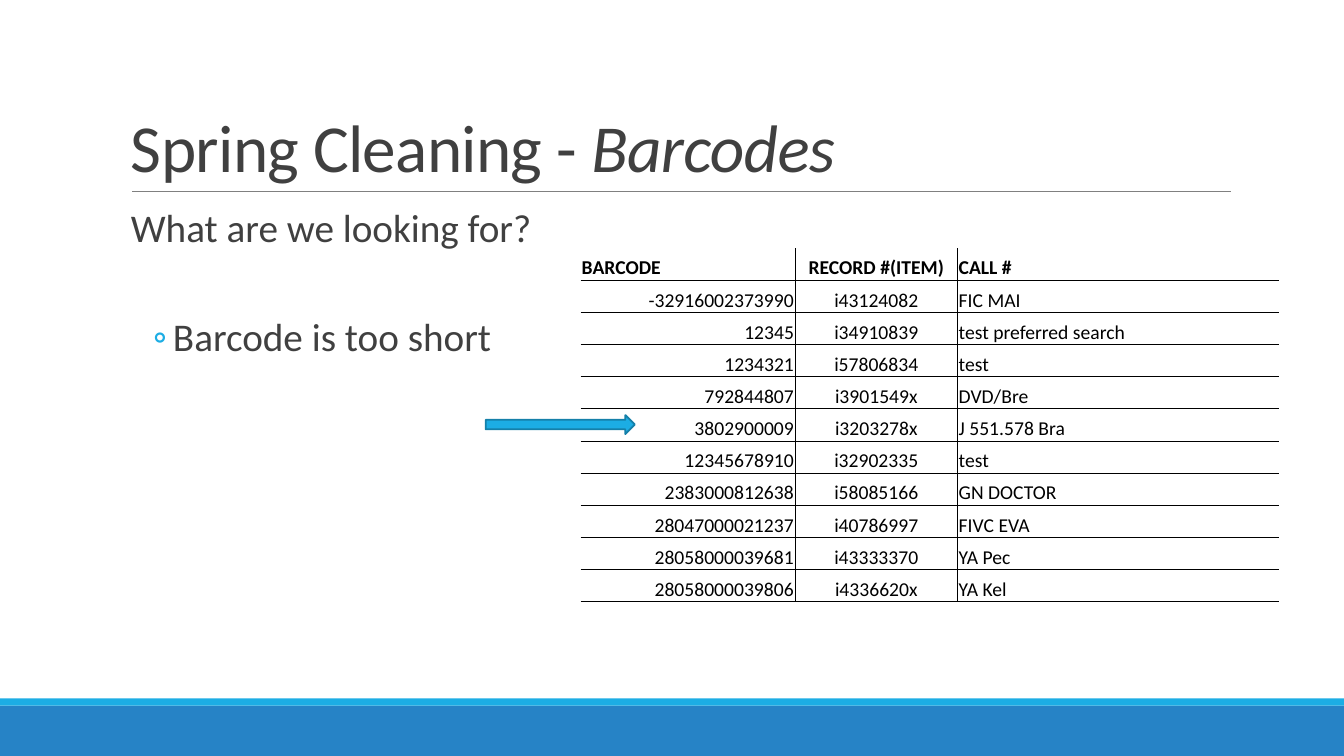
from lxml.etree import SubElement
from pptx import Presentation
from pptx.dml.color import RGBColor
from pptx.enum.shapes import MSO_CONNECTOR, MSO_SHAPE
from pptx.enum.text import MSO_ANCHOR, PP_ALIGN
from pptx.oxml.ns import qn
from pptx.util import Cm, Pt

WHITE = RGBColor(0xFF, 0xFF, 0xFF)
BLACK = RGBColor(0x00, 0x00, 0x00)
CHARCOAL = RGBColor(0x40, 0x40, 0x40)
GREY = RGBColor(0x80, 0x80, 0x80)
BLUE = RGBColor(0x26, 0x83, 0xC6)
SKY = RGBColor(0x1C, 0xAD, 0xE4)
TEAL = RGBColor(0x15, 0x80, 0xA9)

RECORDS = [
    ("BARCODE", "RECORD #(ITEM)", "CALL #"),
    ("-32916002373990", "i43124082", "FIC MAI"),
    ("12345", "i34910839", "test preferred search"),
    ("1234321", "i57806834", "test"),
    ("792844807", "i3901549x", "DVD/Bre"),
    ("3802900009", "i3203278x", "J 551.578 Bra"),
    ("12345678910", "i32902335", "test"),
    ("2383000812638", "i58085166", "GN DOCTOR"),
    ("28047000021237", "i40786997", "FIVC EVA"),
    ("28058000039681", "i43333370", "YA Pec"),
    ("28058000039806", "i4336620x", "YA Kel"),
]
COLUMN_WIDTHS = (5.41, 4.09, 8.1)
COLUMN_ALIGNMENTS = (PP_ALIGN.RIGHT, PP_ALIGN.CENTER, PP_ALIGN.LEFT)
ROW_HEIGHT = 0.81


def write(paragraph, text, size=28, color=CHARCOAL, bold=False, italic=False, tracking=0):
    run = paragraph.add_run()
    run.text = text
    font = run.font
    font.name, font.size, font.bold, font.italic = "Calibri", Pt(size), bold, italic
    font.color.rgb = color
    if tracking:
        run._r.get_or_add_rPr().set("spc", str(int(tracking * 100)))


class BarcodeSlide:
    """Draws the elements of the slide in one shared style."""

    def __init__(self, presentation):
        self.slide = presentation.slides.add_slide(presentation.slide_layouts[6])
        self.shapes = self.slide.shapes
        self.slide.background.fill.solid()
        self.slide.background.fill.fore_color.rgb = WHITE

    def block(self, kind, left, top, width, height, fill, outline=None):
        block = self.shapes.add_shape(kind, Cm(left), Cm(top), Cm(width), Cm(height))
        block.shadow.inherit = False
        block.fill.solid()
        block.fill.fore_color.rgb = fill
        if outline is None:
            block.line.fill.background()
        else:
            block.line.color.rgb = outline
            block.line.width = Pt(1.25)

    def rule(self, left, right, y):
        rule = self.shapes.add_connector(
            MSO_CONNECTOR.STRAIGHT, Cm(left), Cm(y), Cm(right), Cm(y))
        rule.line.color.rgb = GREY
        rule.line.width = Pt(0.5)
        SubElement(rule._element.spPr, qn("a:effectLst"))

    def text_area(self, left, top, width, height, anchor, side_inset):
        area = self.shapes.add_textbox(Cm(left), Cm(top), Cm(width), Cm(height))
        frame = area.text_frame
        frame.word_wrap = True
        frame.vertical_anchor = anchor
        frame.margin_left = frame.margin_right = Cm(side_inset)
        return frame

    def bullet(self, paragraph, symbol, margin, hanging):
        properties = paragraph._p.get_or_add_pPr()
        properties.set("marL", str(Cm(margin)))
        properties.set("indent", str(-Cm(hanging)))
        tint = SubElement(properties, qn("a:buClr"))
        SubElement(tint, qn("a:srgbClr"), val=str(SKY))
        SubElement(properties, qn("a:buFont"), typeface="Calibri")
        SubElement(properties, qn("a:buChar"), char=symbol)

    def borders(self, cell, visible):
        properties = cell._tc.get_or_add_tcPr()
        for side in "LRTB":
            edge = SubElement(properties, qn(f"a:ln{side}"), w=str(Pt(0.5)))
            if side in visible:
                paint = SubElement(edge, qn("a:solidFill"))
                SubElement(paint, qn("a:srgbClr"), val=str(BLACK))
            else:
                SubElement(edge, qn("a:noFill"))

    def cell(self, cell, text, alignment, header, visible_borders):
        self.borders(cell, visible_borders)
        cell.fill.background()
        cell.vertical_anchor = MSO_ANCHOR.BOTTOM
        cell.margin_left = cell.margin_right = cell.margin_top = Cm(0.03)
        cell.margin_bottom = 0
        paragraph = cell.text_frame.paragraphs[0]
        paragraph.alignment = alignment
        write(paragraph, text, size=14, color=BLACK, bold=header)

    def record_table(self, left, top):
        table = self.shapes.add_table(
            len(RECORDS), len(COLUMN_WIDTHS), Cm(left), Cm(top),
            Cm(sum(COLUMN_WIDTHS)), Cm(ROW_HEIGHT * len(RECORDS))).table
        table.first_row = table.horz_banding = False
        for column, width in zip(table.columns, COLUMN_WIDTHS):
            column.width = Cm(width)
        last = len(COLUMN_WIDTHS) - 1
        for r, record in enumerate(RECORDS):
            table.rows[r].height = Cm(ROW_HEIGHT)
            header = r == 0
            for c, value in enumerate(record):
                alignment = PP_ALIGN.LEFT if header and c == 0 else COLUMN_ALIGNMENTS[c]
                visible = "B" + "T" * (r > 0) + "L" * (c > 0) + "R" * (c < last)
                self.cell(table.cell(r, c), value, alignment, header, visible)


def main():
    presentation = Presentation()
    presentation.slide_width = Cm(33.87)
    presentation.slide_height = Cm(19.05)
    page = BarcodeSlide(presentation)

    page.block(MSO_SHAPE.RECTANGLE, 0, 17.78, 33.87, 1.27, BLUE)
    page.block(MSO_SHAPE.RECTANGLE, 0, 17.6, 33.87, 0.18, SKY)
    page.rule(3.33, 31.01, 4.83)

    title = page.text_area(3.05, 0.79, 27.94, 4.04, MSO_ANCHOR.BOTTOM, 0.25).paragraphs[0]
    title.line_spacing = 0.85
    write(title, "Spring Cleaning - ", size=48, tracking=-0.5)
    write(title, "Barcodes", size=48, italic=True, tracking=-0.5)

    body = page.text_area(3.05, 5.13, 13.72, 11.18, MSO_ANCHOR.TOP, 0)
    question, answer = body.paragraphs[0], body.add_paragraph()
    question.line_spacing = answer.line_spacing = 0.9
    question.space_before, question.space_after = Pt(12), Pt(2)
    answer.space_before, answer.space_after = Pt(46), Pt(4)
    page.bullet(question, " ", 0.25, 0.25)
    page.bullet(answer, "◦", 1.31, 0.5)
    write(question, "What are we looking for?")
    write(answer, "Barcode is too short")

    page.record_table(14.63, 6.25)
    page.block(MSO_SHAPE.RIGHT_ARROW, 12.24, 10.46, 3.76, 0.48, SKY, TEAL)
    presentation.save("out.pptx")


if __name__ == "__main__":
    main()
